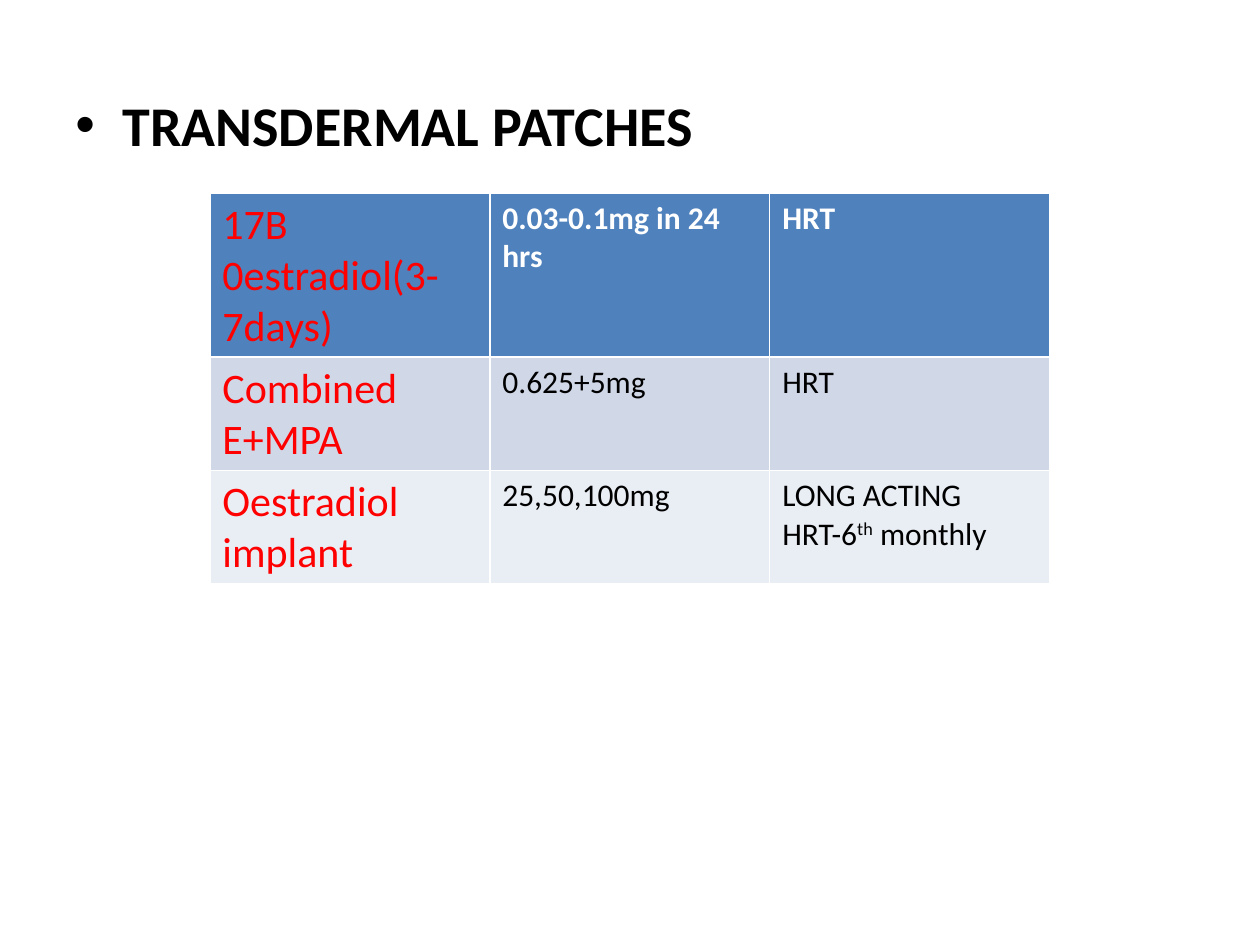
from lxml import etree
from pptx import Presentation
from pptx import util as u
from pptx.dml.color import RGBColor
from pptx.oxml.ns import qn

FONT = "Calibri"
BLACK, WHITE, RED = "000000", "FFFFFF", "FF0000"
ROW_FILLS = ["4F81BD", "D0D8E8", "E9EDF4"]
DOSES = [
    [["17B 0estradiol(3-7days)"], ["0.03-0.1mg in 24 hrs"], ["HRT"]],
    [["Combined E+MPA"], ["0.625+5mg"], ["HRT"]],
    [["Oestradiol implant"], ["25,50,100mg"], ["LONG ACTING HRT-6", "th", " monthly"]],
]


def color(value):
    return RGBColor.from_string(value)


def style(paragraph, size, value, bold):
    font = paragraph.font
    font.name, font.size, font.bold = FONT, u.Pt(size), bold
    font.color.rgb = color(value)


def add_bullet(paragraph, indent):
    properties = paragraph._p.get_or_add_pPr()
    properties.set("marL", str(indent))
    properties.set("indent", str(-indent))
    bullet_font = etree.Element(qn("a:buFont"), typeface="Arial")
    bullet = etree.Element(qn("a:buChar"), char="•")
    default = properties.find(qn("a:defRPr"))
    default.addprevious(bullet_font)
    default.addprevious(bullet)


def add_heading(page, words):
    box = page.shapes.add_textbox(u.Cm(1.27), u.Cm(1.7), u.Cm(22.86), u.Cm(15.32))
    box.text_frame.word_wrap = True
    para = box.text_frame.paragraphs[0]
    para.text = words
    para.space_before = u.Pt(6.4)
    style(para, 32, BLACK, True)
    add_bullet(para, u.Cm(0.95))


def fill_cell(cell, spans, fill, size, value, bold):
    cell.fill.solid()
    cell.fill.fore_color.rgb = color(fill)
    para = cell.text_frame.paragraphs[0]
    style(para, size, value, bold)
    for words in spans:
        span = para.add_run()
        span.text = words
        if words == "th":
            span._r.get_or_add_rPr().set("baseline", "30000")


def add_dose_table(page):
    frame = page.shapes.add_table(3, 3, u.Cm(4.23), u.Cm(3.89), u.Cm(16.93), u.Cm(7.87))
    table = frame.table
    for row_index, (cells, fill) in enumerate(zip(DOSES, ROW_FILLS)):
        table.rows[row_index].height = u.Cm(2.08)
        is_header = row_index == 0
        for column_index, spans in enumerate(cells):
            cell = table.cell(row_index, column_index)
            if column_index == 0:
                fill_cell(cell, spans, fill, 24, RED, False)
            else:
                fill_cell(cell, spans, fill, 18, WHITE if is_header else BLACK, is_header)


def main():
    deck = Presentation()
    deck.slide_width, deck.slide_height = u.Cm(25.4), u.Cm(19.05)
    page = deck.slides.add_slide(deck.slide_layouts[6])
    add_heading(page, "TRANSDERMAL PATCHES")
    add_dose_table(page)
    deck.save("out.pptx")


if __name__ == "__main__":
    main()
